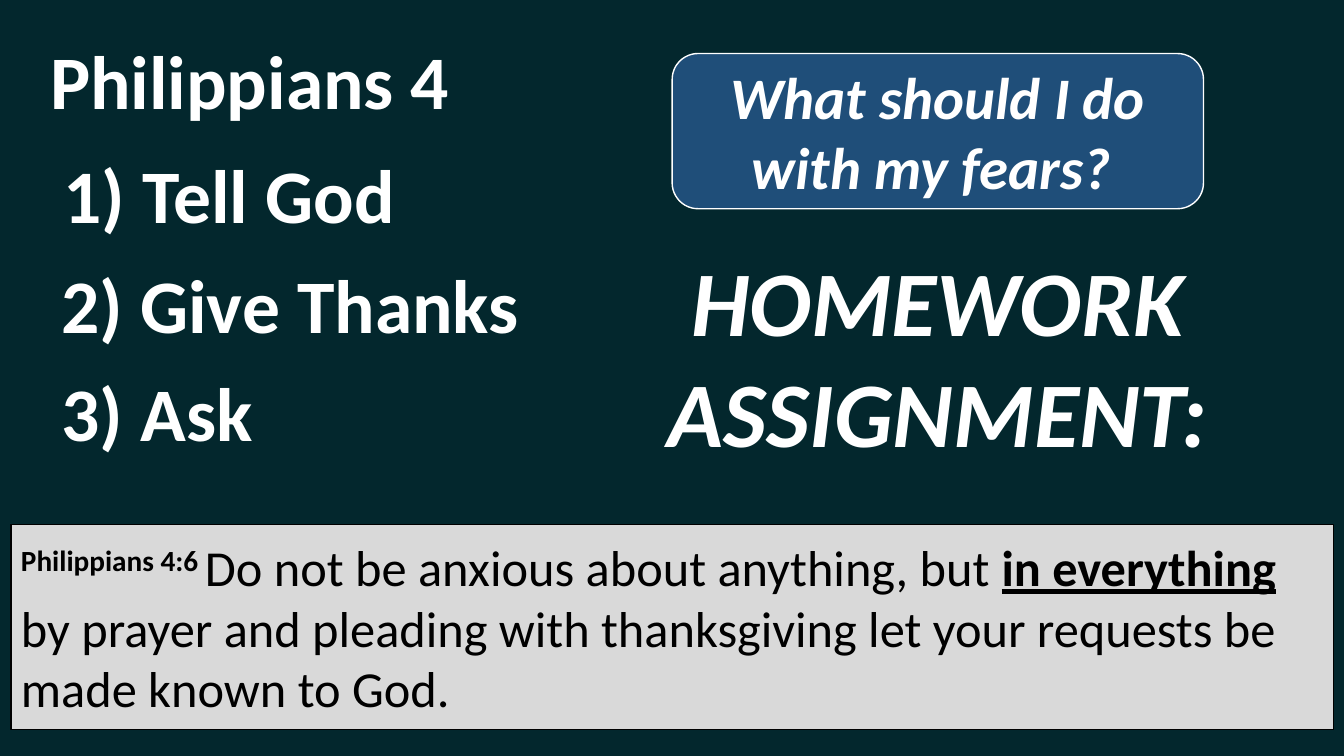
from pptx import Presentation
from pptx.dml.color import RGBColor
from pptx.enum.shapes import MSO_SHAPE as Shape
from pptx.enum.text import MSO_ANCHOR as Anchor, PP_ALIGN as Align
from pptx.util import Cm, Pt

NIGHT = RGBColor(0x03, 0x27, 0x2D)
BLUE = RGBColor(0x1F, 0x4E, 0x79)
GREY = RGBColor(0xD9, 0xD9, 0xD9)
WHITE = RGBColor(0xFF, 0xFF, 0xFF)
BLACK = RGBColor(0x00, 0x00, 0x00)

POINTS = [
    ("Philippians 4", (0, 0.74, 12.6, 2.57), Align.CENTER),
    ("1) Tell God", (1.04, 3.61, 9.47, 2.57), Align.CENTER),
    ("2) Give Thanks", (1.3, 6.38, 12.12, 2.57), Align.LEFT),
    ("3) Ask", (1.3, 9.09, 12.12, 2.57), Align.LEFT),
]
QUESTION = "What should I do with my fears? "
HOMEWORK = "HOMEWORK ASSIGNMENT:"
VERSE = [
    ("Philippians 4:6 ", {"bold": True, "superscript": True}),
    ("Do not be anxious about anything, but ", {}),
    ("in everything ", {"bold": True, "underline": True}),
    ("by prayer and pleading with thanksgiving let your requests be made known to God. ", {}),
]


def write(shape, runs, size, color, align, anchor):
    frame = shape.text_frame
    frame.word_wrap = True
    frame.vertical_anchor = anchor
    paragraph = frame.paragraphs[0]
    paragraph.alignment = align
    for text, style in runs:
        run = paragraph.add_run()
        run.text = text
        font = run.font
        font.name = "Calibri"
        font.size = Pt(size)
        font.color.rgb = color
        font.bold = style.get("bold", False)
        font.italic = style.get("italic", False)
        font.underline = style.get("underline", False)
        if style.get("superscript"):
            run._r.get_or_add_rPr().set("baseline", "30000")


def add_panel(slide, kind, box, fill, line):
    shape = slide.shapes.add_shape(kind, *map(Cm, box))
    shape.shadow.inherit = False
    if fill is None:
        shape.fill.background()
        shape.line.fill.background()
    else:
        shape.fill.solid()
        shape.fill.fore_color.rgb = fill
        shape.line.color.rgb = line
        shape.line.width = Pt(1)
    return shape


presentation = Presentation()
presentation.slide_width = Cm(33.87)
presentation.slide_height = Cm(19.05)
slide = presentation.slides.add_slide(presentation.slide_layouts[6])
slide.background.fill.solid()
slide.background.fill.fore_color.rgb = NIGHT

verse = add_panel(slide, Shape.RECTANGLE, (0.28, 13.21, 33.32, 5.18), GREY, BLACK)
write(verse, VERSE, 36, BLACK, Align.LEFT, Anchor.MIDDLE)

for text, box, align in POINTS:
    point = slide.shapes.add_textbox(*map(Cm, box))
    write(point, [(text, {"bold": True})], 54, WHITE, align, Anchor.TOP)

for text, box, fill, size in [
    (QUESTION, (16.94, 1.35, 13.39, 3.91), BLUE, 42),
    (HOMEWORK, (14.45, 6.99, 18.36, 3.91), None, 66),
]:
    panel = add_panel(slide, Shape.ROUNDED_RECTANGLE, box, fill, WHITE)
    write(panel, [(text, {"bold": True, "italic": True})], size, WHITE, Align.CENTER, Anchor.MIDDLE)

presentation.save("out.pptx")
